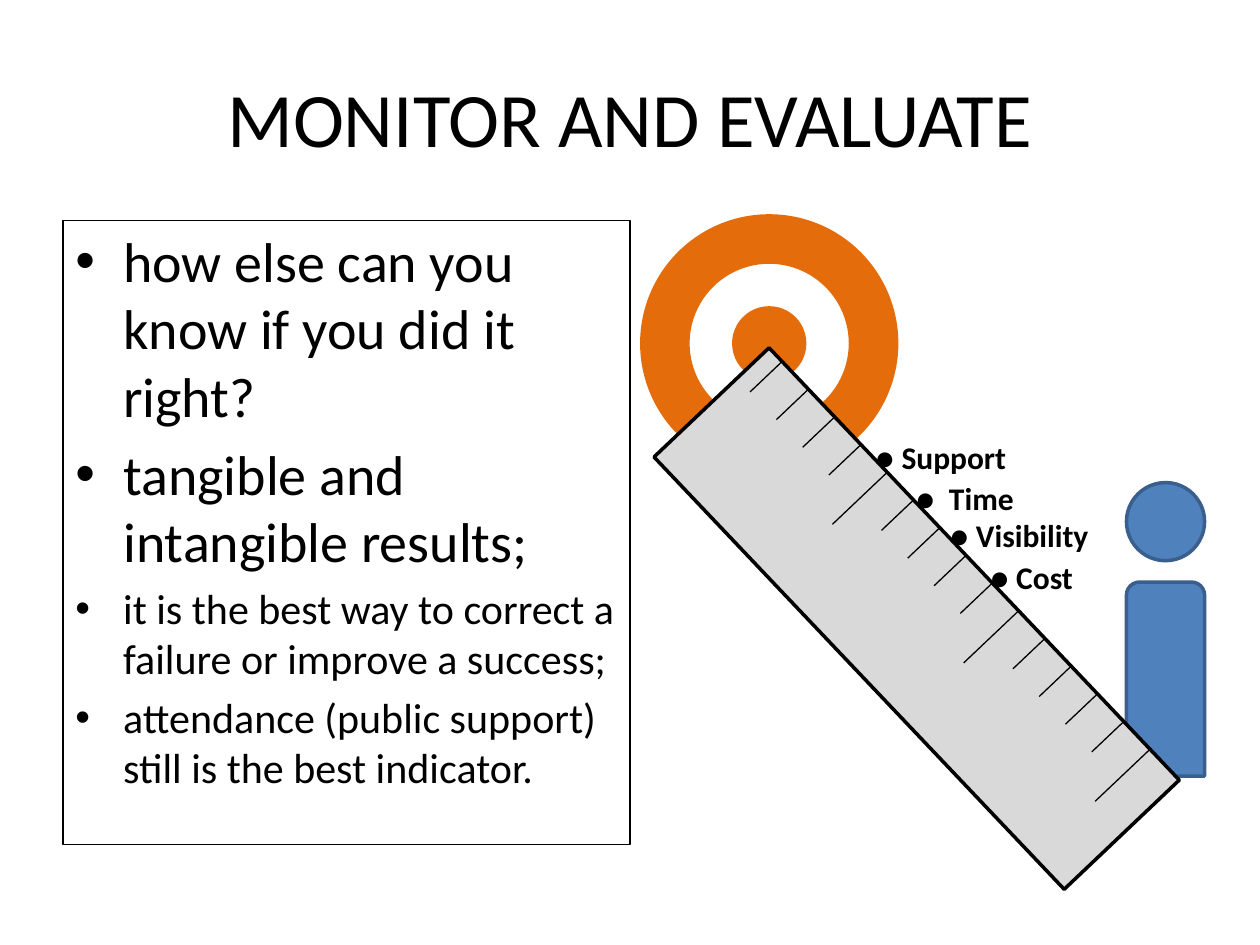
from math import cos, radians, sin

from lxml.etree import SubElement
from pptx import Presentation
from pptx.dml.color import RGBColor
from pptx.enum.shapes import MSO_CONNECTOR, MSO_SHAPE
from pptx.enum.text import MSO_ANCHOR, PP_ALIGN
from pptx.oxml.ns import qn
from pptx.util import Inches, Pt

# Content
TITLE = "MONITOR AND EVALUATE"
POINTS = [
    ("how else can you know if you did it right?", "large"),
    ("tangible and intangible results;", "large"),
    ("it is the best way to correct a failure or improve a success;", "small"),
    ("attendance (public support) still is the best indicator.", "small"),
]
MEASURES = [  # text, left, top
    ("● Support", 6.85, 3.43),
    ("●  Time", 7.17, 3.75),
    ("● Visibility", 7.44, 4.05),
    ("● Cost", 7.76, 4.38),
]

THEME = {
    "font": "Calibri",
    "ink": "000000", "target": "E46C0A", "ruler": "D9D9D9",
    "person": "4F81BD", "person_edge": "3A5F8C",
    "title": 44, "large": 32, "small": 24, "label": 18,
    "thin": 0.75, "thick": 2,
}

# Layout
WIDTH, HEIGHT = 10, 7.5
MARGIN = WIDTH * 0.05
HANG = 0.38
TARGET_CENTER, TARGET_SIZE, BULLSEYE_SIZE = (6.105, 2.725), 2.05, 0.59
PERSON_LEFT, PERSON_WIDTH = 8.94, 0.62
RULER_CENTER, RULER_SIZE, RULER_ANGLE = (7.275, 4.91), (4.73, 1.26), 46.5
TICKS, TICK_GAP, FIRST_TICK = 15, 0.303, 0.15
SHORT_TICK, LONG_TICK = 0.35, 0.6

deck = Presentation()
deck.slide_width, deck.slide_height = Inches(WIDTH), Inches(HEIGHT)
page = deck.slides.add_slide(deck.slide_layouts[6])


def color(name):
    return RGBColor.from_string(THEME[name])


def set_line(line, name, weight):
    line.color.rgb = color(name)
    line.width = Pt(THEME[weight])


def add_figure(kind, left, top, width, height, fill, edge=None):
    shape = page.shapes.add_shape(
        kind, Inches(left), Inches(top), Inches(width), Inches(height))
    shape.shadow.inherit = False
    shape.fill.solid()
    shape.fill.fore_color.rgb = color(fill)
    if edge:
        set_line(shape.line, edge, "thick")
    else:
        shape.line.fill.background()
    return shape


def add_centered(kind, center, width, height, fill, edge=None):
    return add_figure(kind, center[0] - width / 2, center[1] - height / 2,
                      width, height, fill, edge)


def add_box(left, top, width, height):
    box = page.shapes.add_textbox(
        Inches(left), Inches(top), Inches(width), Inches(height))
    box.text_frame.word_wrap = True
    return box


def add_span(para, text, size, bold=False):
    span = para.add_run()
    span.text = text
    span.font.name = THEME["font"]
    span.font.size = Pt(THEME[size])
    span.font.bold = bold
    span.font.color.rgb = color("ink")


def add_bullet(para):
    props = para._p.get_or_add_pPr()
    props.set("marL", str(Inches(HANG)))
    props.set("indent", str(-Inches(HANG)))
    SubElement(props, qn("a:buFont")).set("typeface", "Arial")
    SubElement(props, qn("a:buChar")).set("char", "•")


def ruler_point(along, across):
    """Turn a place on the level ruler, from its top left corner, to the page."""
    x, y = along - RULER_SIZE[0] / 2, across - RULER_SIZE[1] / 2
    turn = radians(RULER_ANGLE)
    return (Inches(RULER_CENTER[0] + x * cos(turn) - y * sin(turn)),
            Inches(RULER_CENTER[1] + x * sin(turn) + y * cos(turn)))


# Title
box = add_box(MARGIN, 0.3, WIDTH - 2 * MARGIN, 1.25)
box.text_frame.vertical_anchor = MSO_ANCHOR.MIDDLE
para = box.text_frame.paragraphs[0]
para.alignment = PP_ALIGN.CENTER
add_span(para, TITLE, "title")

# Framed bullet list
box = add_box(MARGIN, 1.75, WIDTH / 2 - MARGIN, 4.95)
set_line(box.line, "ink", "thin")
frame = box.text_frame
for index, (text, size) in enumerate(POINTS):
    para = frame.add_paragraph() if index else frame.paragraphs[0]
    para.space_before = Pt(THEME[size] * 0.2)
    add_bullet(para)
    add_span(para, text, size)

# Target
ring = add_centered(MSO_SHAPE.DONUT, TARGET_CENTER, TARGET_SIZE, TARGET_SIZE, "target")
ring.adjustments[0] = 0.192
add_centered(MSO_SHAPE.OVAL, TARGET_CENTER, BULLSEYE_SIZE, BULLSEYE_SIZE, "target")

# Person
for kind, top, height in [(MSO_SHAPE.ROUND_2_SAME_RECTANGLE, 4.62, 1.54),
                          (MSO_SHAPE.OVAL, 3.83, PERSON_WIDTH)]:
    add_figure(kind, PERSON_LEFT, top, PERSON_WIDTH, height, "person", "person_edge")

# Ruler, with every fifth tick long
ruler = add_centered(MSO_SHAPE.RECTANGLE, RULER_CENTER, *RULER_SIZE, "ruler", "ink")
ruler.rotation = RULER_ANGLE
for index in range(TICKS):
    along = FIRST_TICK + index * TICK_GAP
    length = LONG_TICK if index % 5 == 4 else SHORT_TICK
    tick = page.shapes.add_connector(
        MSO_CONNECTOR.STRAIGHT, *ruler_point(along, 0), *ruler_point(along, length))
    set_line(tick.line, "ink", "thin")
    SubElement(tick._element.spPr, qn("a:effectLst"))

# Measures along the ruler
for text, left, top in MEASURES:
    box = add_box(left, top, 2.17, 0.4)
    add_span(box.text_frame.paragraphs[0], text, "label", bold=True)

deck.save("out.pptx")
